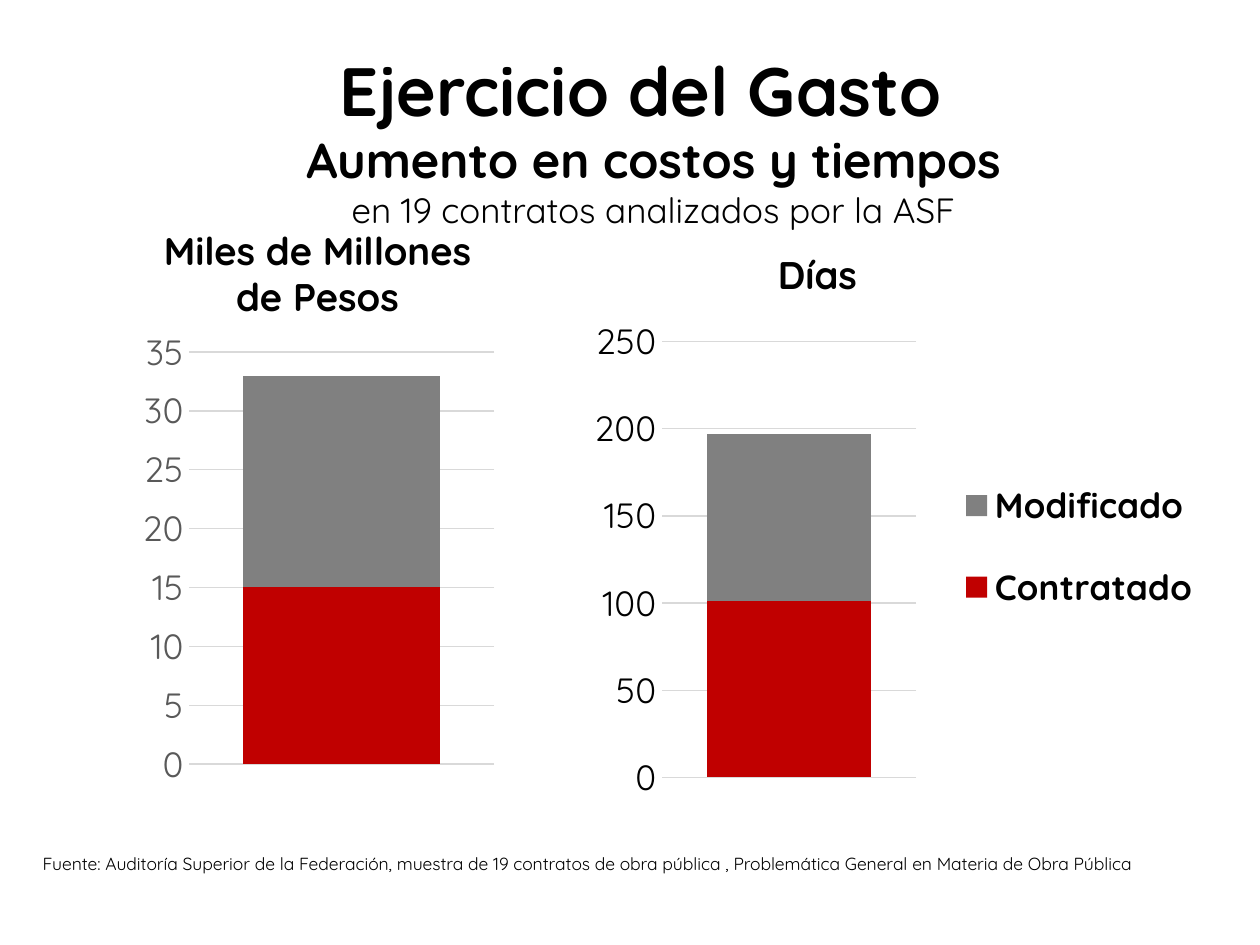
from dataclasses import dataclass
from typing import NamedTuple

from lxml.etree import SubElement
from pptx import Presentation
from pptx.chart.data import CategoryChartData
from pptx.dml.color import RGBColor
from pptx.enum.chart import XL_CHART_TYPE as ChartType
from pptx.enum.chart import XL_LEGEND_POSITION as LegendPosition
from pptx.enum.chart import XL_TICK_MARK as TickMark
from pptx.enum.text import MSO_ANCHOR as Anchor
from pptx.enum.text import PP_ALIGN as Align
from pptx.oxml.ns import qn
from pptx.util import Cm, Pt


@dataclass(frozen=True)
class Theme:
    font: str = "Quicksand"
    black: RGBColor = RGBColor(0, 0, 0)
    axis_gray: RGBColor = RGBColor(0x59, 0x59, 0x59)
    grid: RGBColor = RGBColor(0xD9, 0xD9, 0xD9)
    contracted: RGBColor = RGBColor(0xC0, 0, 0)
    modified: RGBColor = RGBColor(0x80, 0x80, 0x80)
    title: int = 39
    subtitle: int = 28
    heading: int = 22
    body: int = 20
    source: int = 10


THEME = Theme()


class Area(NamedTuple):
    """Left, top, width and height: centimetres on the page, fractions in a chart."""
    left: float
    top: float
    width: float
    height: float


class Span(NamedTuple):
    text: str
    size: int
    bold: bool = True


@dataclass(frozen=True)
class TextBlock:
    area: Area
    spans: tuple[Span, ...]
    align: Align = Align.CENTER
    anchor: Anchor = Anchor.TOP
    line_spacing: float = 1.0


@dataclass(frozen=True)
class StackedColumn:
    area: Area
    plot: Area
    contracted: int
    modified: int
    axis_max: int
    axis_step: int
    axis_color: RGBColor
    legend: Area | None = None


TEXTS = (
    TextBlock(Area(3.53, 0.86, 18.75, 1.91),
              (Span("Ejercicio del Gasto", THEME.title),),
              anchor=Anchor.BOTTOM, line_spacing=0.9),
    TextBlock(Area(5.49, 2.49, 15.37, 2.31),
              (Span("Aumento en costos y tiempos ", THEME.subtitle),
               Span("en 19 contratos analizados por la ASF", THEME.body, False))),
    TextBlock(Area(0.61, 17.07, 25.1, 0.69),
              (Span("Fuente: Auditoría Superior de la Federación, muestra de 19 contratos "
                    "de obra pública , Problemática General en Materia de Obra Pública",
                    THEME.source, False),), align=Align.JUSTIFY),
    TextBlock(Area(13.94, 4.93, 5.08, 1.19), (Span("Días", THEME.heading),)),
    TextBlock(Area(2.69, 4.45, 7.42, 2.13),
              (Span("Miles de Millones de Pesos", THEME.heading),)),
)

CHARTS = (
    StackedColumn(Area(11.23, 5.72, 13.16, 10.59), Area(0.16, 0.11, 0.39, 0.83),
                  101, 96, 250, 50, THEME.black, Area(0.61, 0.31, 0.38, 0.38)),
    StackedColumn(Area(2.69, 6.43, 7.42, 9.55), Area(0.15, 0.07, 0.83, 0.87),
                  15, 18, 35, 5, THEME.axis_gray),
)


def style_font(font, size: int, color: RGBColor, bold: bool = False) -> None:
    font.name = THEME.font
    font.size = Pt(size)
    font.bold = bold
    font.color.rgb = color


def add_text(page, block: TextBlock) -> None:
    box = page.shapes.add_textbox(*map(Cm, block.area))
    frame = box.text_frame
    frame.word_wrap = True
    frame.vertical_anchor = block.anchor
    para = frame.paragraphs[0]
    para.alignment = block.align
    para.line_spacing = block.line_spacing
    for span in block.spans:
        run = para.add_run()
        run.text = span.text
        style_font(run.font, span.size, THEME.black, span.bold)


def set_layout(parent, index: int, area: Area, inner: bool = False) -> None:
    """Fix the place of a chart part, as fractions of the chart."""
    for old in parent.findall(qn("c:layout")):
        parent.remove(old)
    layout = SubElement(parent, qn("c:layout"))
    parent.insert(index, layout)
    manual = SubElement(layout, qn("c:manualLayout"))
    settings = [("layoutTarget", "inner")] if inner else []
    settings += [("xMode", "edge"), ("yMode", "edge")]
    settings += zip("xywh", map(str, area))
    for tag, value in settings:
        SubElement(manual, qn(f"c:{tag}")).set("val", value)


def add_legend(chart, area: Area) -> None:
    chart.has_legend = True
    legend = chart.legend
    legend.position = LegendPosition.RIGHT
    legend.include_in_layout = False
    style_font(legend.font, THEME.body, THEME.black, True)
    set_layout(legend._element, 1, area)


def add_stacked_column(page, column: StackedColumn) -> None:
    data = CategoryChartData()
    data.categories = ["1"]
    data.add_series("Contratado", [column.contracted])
    data.add_series("Modificado", [column.modified])
    chart = page.shapes.add_chart(
        ChartType.COLUMN_STACKED, *map(Cm, column.area), data).chart
    chart.has_title = False
    chart.has_legend = False
    style_font(chart.font, THEME.body, THEME.black)

    plot = chart.plots[0]
    plot.gap_width = 55
    plot.overlap = 100
    plot.vary_by_categories = False
    for series, color in zip(plot.series, (THEME.contracted, THEME.modified)):
        series.format.fill.solid()
        series.format.fill.fore_color.rgb = color

    chart.category_axis.visible = False
    axis = chart.value_axis
    axis.minimum_scale = 0
    axis.maximum_scale = column.axis_max
    axis.major_unit = column.axis_step
    axis.major_tick_mark = axis.minor_tick_mark = TickMark.NONE
    axis.format.line.fill.background()
    style_font(axis.tick_labels.font, THEME.body, column.axis_color)
    grid_line = axis.major_gridlines.format.line
    grid_line.width = Pt(0.75)
    grid_line.color.rgb = THEME.grid

    set_layout(chart._chartSpace.chart.plotArea, 0, column.plot, inner=True)
    if column.legend:
        add_legend(chart, column.legend)


def main() -> None:
    deck = Presentation()
    deck.slide_width, deck.slide_height = Cm(25.4), Cm(19.05)
    page = deck.slides.add_slide(deck.slide_layouts[6])
    for block in TEXTS:
        add_text(page, block)
    for column in CHARTS:
        add_stacked_column(page, column)
    deck.save("out.pptx")


if __name__ == "__main__":
    main()
